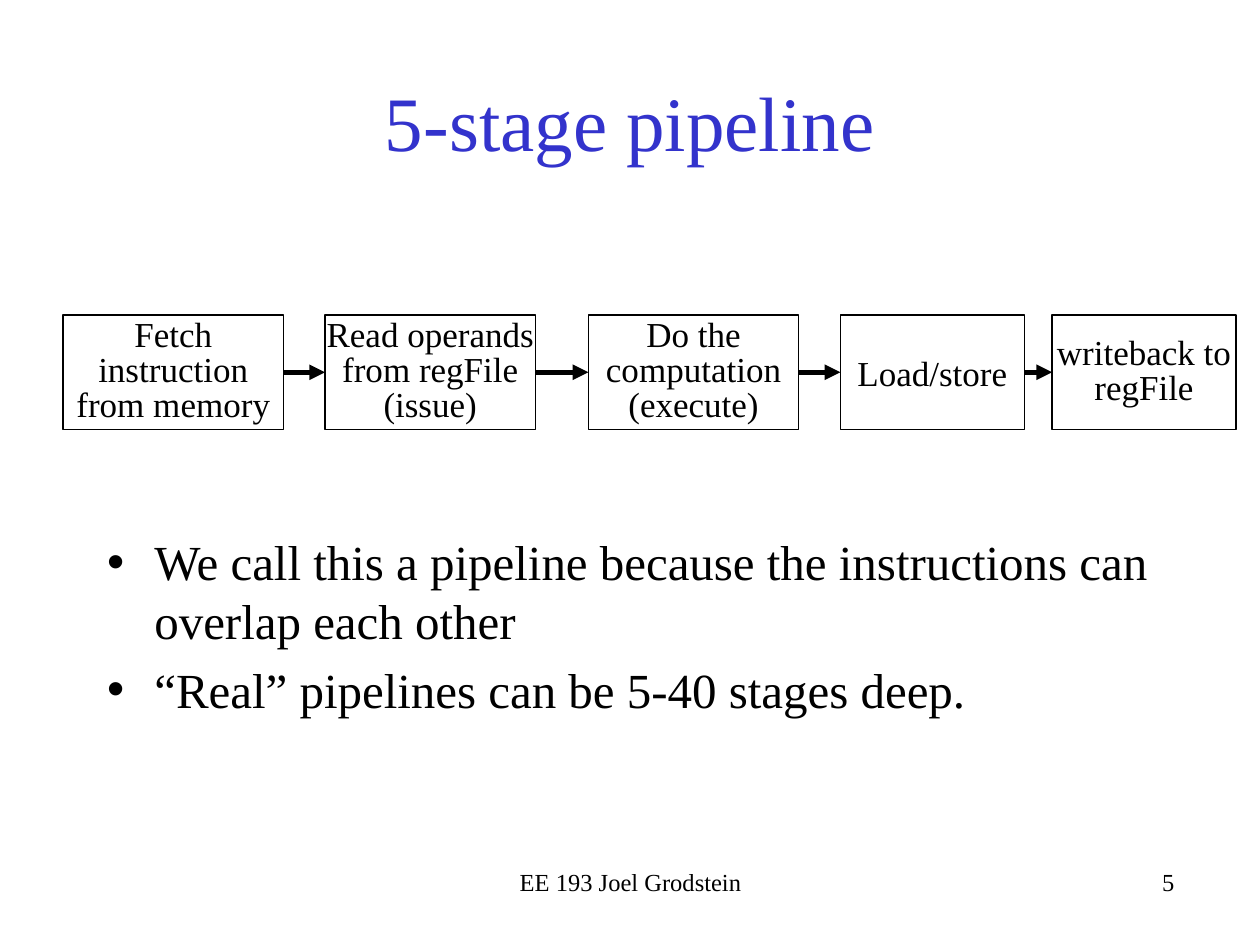
from dataclasses import dataclass
from itertools import pairwise

from lxml import etree
from pptx import Presentation
from pptx.dml.color import RGBColor
from pptx.enum.shapes import MSO_CONNECTOR, MSO_SHAPE
from pptx.enum.text import MSO_ANCHOR, MSO_AUTO_SIZE, PP_ALIGN
from pptx.oxml.ns import qn
from pptx.shapes.autoshape import Shape
from pptx.slide import Slide
from pptx.text.text import _Paragraph
from pptx.util import Inches, Pt

RECTANGLE = MSO_SHAPE.RECTANGLE
STRAIGHT = MSO_CONNECTOR.STRAIGHT
MIDDLE = MSO_ANCHOR.MIDDLE
NO_AUTOFIT = MSO_AUTO_SIZE.NONE
LEFT, CENTER, RIGHT = PP_ALIGN.LEFT, PP_ALIGN.CENTER, PP_ALIGN.RIGHT
LEFT_SIDE, RIGHT_SIDE = 1, 3

FONT = "Times New Roman"
COLORS = {"title": "3333CC", "ink": "000000", "paper": "FFFFFF"}
STAGE_TOP, STAGE_HEIGHT = 2.5, 0.91
FOOTER_TOP, FOOTER_WIDTH, FOOTER_HEIGHT = 6.83, 3.17, 0.5


@dataclass(frozen=True)
class Stage:
    label: str
    left: float
    width: float
    line_spacing: float | None = 20


@dataclass(frozen=True)
class FooterItem:
    text: str
    left: float
    align: PP_ALIGN


STAGES = [
    Stage("Fetch instruction from memory", 0.5, 1.75),
    Stage("Read operands from regFile (issue)", 2.58, 1.67),
    Stage("Do the computation (execute)", 4.67, 1.67),
    Stage("Load/store", 6.67, 1.46, None),
    Stage("writeback to regFile", 8.35, 1.46),
]
POINTS = [
    "We call this a pipeline because the instructions can overlap each other",
    "“Real” pipelines can be 5-40 stages deep.",
]
FOOTER = [
    FooterItem("EE 193 Joel Grodstein", 3.42, CENTER),
    FooterItem("5", 6.25, RIGHT),
]


def color(key: str) -> RGBColor:
    return RGBColor.from_string(COLORS[key])


def style(paragraph: _Paragraph, size: float, align: PP_ALIGN, ink: str = "ink") -> None:
    paragraph.alignment = align
    paragraph.font.name = FONT
    paragraph.font.size = Pt(size)
    paragraph.font.color.rgb = color(ink)


def place(shape: Shape, left: float, top: float, width: float, height: float) -> None:
    shape.left, shape.top = Inches(left), Inches(top)
    shape.width, shape.height = Inches(width), Inches(height)


def fill_placeholders(slide: Slide) -> None:
    title, body = slide.placeholders
    place(title, 0.75, 0.33, 8.5, 1.25)
    title.text_frame.text = "5-stage pipeline"
    title.text_frame.vertical_anchor = MIDDLE
    style(title.text_frame.paragraphs[0], 44, CENTER, "title")

    place(body, 0.75, 4.17, 8.75, 2.5)
    body.text_frame.text = "\n".join(POINTS)
    for paragraph in body.text_frame.paragraphs:
        style(paragraph, 28, LEFT)
    for placeholder in (title, body):
        placeholder.text_frame.auto_size = NO_AUTOFIT


def draw_stage(slide: Slide, stage: Stage) -> Shape:
    box = slide.shapes.add_shape(
        RECTANGLE, Inches(stage.left), Inches(STAGE_TOP),
        Inches(stage.width), Inches(STAGE_HEIGHT),
    )
    box.shadow.inherit = False
    box.fill.solid()
    box.fill.fore_color.rgb = color("paper")
    box.line.color.rgb = color("ink")
    box.line.width = Pt(0.75)
    frame = box.text_frame
    frame.text = stage.label
    frame.word_wrap = True
    frame.vertical_anchor = MIDDLE
    frame.margin_left = frame.margin_right = frame.margin_top = frame.margin_bottom = 0
    paragraph = frame.paragraphs[0]
    style(paragraph, 20, CENTER)
    if stage.line_spacing:
        paragraph.line_spacing = Pt(stage.line_spacing)
    return box


def draw_arrow(slide: Slide, source: Shape, target: Shape) -> None:
    arrow = slide.shapes.add_connector(STRAIGHT, 0, 0, 0, 0)
    arrow.begin_connect(source, RIGHT_SIDE)
    arrow.end_connect(target, LEFT_SIDE)
    arrow.line.color.rgb = color("ink")
    arrow.line.width = Pt(3)
    etree.SubElement(arrow.line._get_or_add_ln(), qn("a:tailEnd"), type="triangle")
    etree.SubElement(arrow._element.spPr, qn("a:effectLst"))


def draw_footer_item(slide: Slide, item: FooterItem) -> None:
    footer = slide.shapes.add_textbox(
        Inches(item.left), Inches(FOOTER_TOP), Inches(FOOTER_WIDTH), Inches(FOOTER_HEIGHT)
    )
    footer.text_frame.word_wrap = True
    footer.text_frame.text = item.text
    style(footer.text_frame.paragraphs[0], 14, item.align)


def main() -> None:
    presentation = Presentation()
    presentation.slide_width, presentation.slide_height = Inches(10), Inches(7.5)
    slide = presentation.slides.add_slide(presentation.slide_layouts[1])
    fill_placeholders(slide)
    boxes = [draw_stage(slide, stage) for stage in STAGES]
    for source, target in pairwise(boxes):
        draw_arrow(slide, source, target)
    for item in FOOTER:
        draw_footer_item(slide, item)
    presentation.save("out.pptx")


if __name__ == "__main__":
    main()
